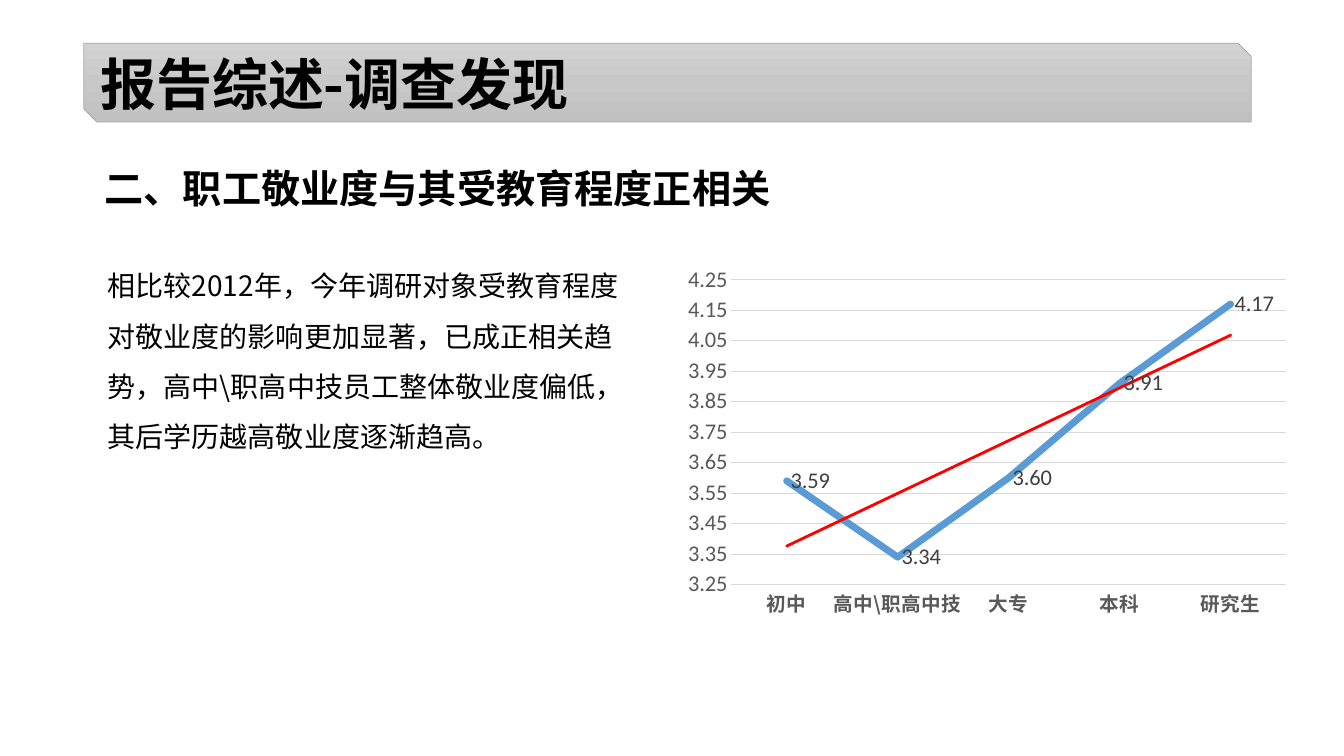
from copy import deepcopy

from lxml.etree import SubElement
from pptx import Presentation
from pptx.chart.data import CategoryChartData
from pptx.dml.color import RGBColor
from pptx.enum.chart import XL_CHART_TYPE as CHART, XL_LABEL_POSITION as LABEL, XL_TICK_MARK as TICK
from pptx.enum.shapes import MSO_SHAPE as SHAPE
from pptx.enum.text import MSO_ANCHOR as ANCHOR, MSO_AUTO_SIZE as AUTO, PP_ALIGN as ALIGN
from pptx.oxml import parse_xml
from pptx.oxml.ns import nsdecls, qn
from pptx.util import Inches, Pt

CJK, LATIN = "Noto Sans CJK SC", "Calibri"
EDUCATION = ["初中", "高中\\职高中技", "大专", "本科", "研究生"]
ENGAGEMENT = [3.59, 3.34, 3.6, 3.91, 4.17]
PLOT = dict(x=0.109, y=0.126, w=0.867, h=0.61)


def rgb(color):
    return RGBColor.from_string(color)


def style_font(font, size, color, name, bold=False):
    font.size, font.bold, font.name = Pt(size), bold, name
    font.color.rgb = rgb(color)


def style_line(line, color, width):
    line.color.rgb = rgb(color)
    line.width = Pt(width)


def add_ea(r_pr):
    ea = SubElement(r_pr, qn("a:ea"))
    ea.set("typeface", CJK)
    r_pr.find(qn("a:latin")).addnext(ea)


def write_text(tf, text, size, bold=False, before=0, spacing=1.0,
               anchor=ANCHOR.TOP, wrap=True, grow=False):
    tf.word_wrap, tf.vertical_anchor = wrap, anchor
    if grow:
        tf.auto_size = AUTO.SHAPE_TO_FIT_TEXT
    p = tf.paragraphs[0]
    p.alignment, p.space_before, p.line_spacing = ALIGN.LEFT, Pt(before), spacing
    r = p.add_run()
    r.text = text
    style_font(r.font, size, "000000", CJK, bold)
    add_ea(r.font._element)


def add_banner(s, box, text):
    sp = s.shapes.add_shape(SHAPE.SNIP_2_DIAG_RECTANGLE, *box)
    sp.shadow.inherit = False
    sp.fill.gradient()
    sp.fill.gradient_angle = 270
    first = sp.fill.gradient_stops[0]._gs
    first.addnext(deepcopy(first))
    for stop, color, position in zip(sp.fill.gradient_stops,
                                     ("D2D2D2", "C8C8C8", "C0C0C0"), (0, 0.5, 1)):
        stop.color.rgb = rgb(color)
        stop.position = position
    style_line(sp.line, "A5A5A5", 0.5)
    write_text(sp.text_frame, text, 40, bold=True, anchor=ANCHOR.MIDDLE)


def add_text(s, box, text, size, **fmt):
    write_text(s.shapes.add_textbox(*box).text_frame, text, size, before=10, grow=True, **fmt)


def place_plot(chart):
    area = chart._chartSpace.chart.plotArea
    for layout in area.findall(qn("c:layout")):
        area.remove(layout)
    sizes = "".join(f'<c:{key} val="{share}"/>' for key, share in PLOT.items())
    area.insert(0, parse_xml(
        f'<c:layout {nsdecls("c")}><c:manualLayout><c:layoutTarget val="inner"/>'
        f'<c:xMode val="edge"/><c:yMode val="edge"/>{sizes}</c:manualLayout></c:layout>'))


def add_trend(series, color, width):
    series._element.find(qn("c:cat")).addprevious(parse_xml(
        f'<c:trendline {nsdecls("c", "a")}><c:spPr><a:ln w="{Pt(width)}" cap="rnd"><a:solidFill>'
        f'<a:srgbClr val="{color}"/></a:solidFill></a:ln></c:spPr>'
        '<c:trendlineType val="linear"/><c:dispRSqr val="0"/><c:dispEq val="0"/></c:trendline>'))


def add_engagement_chart(s, box):
    data = CategoryChartData()
    data.categories = EDUCATION
    data.add_series("Series 1", ENGAGEMENT)
    chart = s.shapes.add_chart(CHART.LINE, *box, data).chart
    chart.has_title = chart.has_legend = False
    style_font(chart.font, 10, "000000", LATIN)
    place_plot(chart)

    cat, val = chart.category_axis, chart.value_axis
    for axis in (cat, val):
        axis.major_tick_mark = axis.minor_tick_mark = TICK.NONE
    style_font(cat.tick_labels.font, 14, "595959", CJK, bold=True)
    add_ea(cat.tick_labels.font._element)
    style_font(val.tick_labels.font, 16, "595959", LATIN)
    style_line(cat.format.line, "D9D9D9", 0.75)
    style_line(val.major_gridlines.format.line, "D9D9D9", 0.75)
    val.format.line.fill.background()
    val.minimum_scale, val.maximum_scale, val.major_unit = 3.25, 4.25, 0.1
    val.tick_labels.number_format = "####.00"
    val.tick_labels.number_format_is_linked = False

    plot = chart.plots[0]
    plot.vary_by_categories = False
    series = plot.series[0]
    series.smooth = False
    style_line(series.format.line, "5B9BD5", 5)
    series.format.line._get_or_add_ln().set("cap", "rnd")
    labels = series.data_labels
    labels.show_value, labels.position = True, LABEL.RIGHT
    labels.number_format = "#,##0.00_);[Red]\\(#,##0.00\\)"
    labels.number_format_is_linked = False
    style_font(labels.font, 16, "404040", LATIN)
    add_trend(series, "FF0000", 2)


def main():
    prs = Presentation()
    prs.slide_width, prs.slide_height = Inches(13.33), Inches(7.5)
    s = prs.slides.add_slide(prs.slide_layouts[6])

    def box(*lengths):
        return [Inches(length) for length in lengths]

    add_engagement_chart(s, box(6.56, 2.15, 6.35, 4.96))
    add_text(s, box(0.97, 2.45, 5.4, 2.12),
             "相比较2012年，今年调研对象受教育程度对敬业度的影响更加显著，已成正相关趋势，"
             "高中\\职高中技员工整体敬业度偏低，其后学历越高敬业度逐渐趋高。", 20, spacing=1.5)
    add_banner(s, box(0.83, 0.43, 11.58, 0.78), "报告综述-调查发现")
    add_text(s, box(0.94, 1.58, 6.88, 0.57), "二、职工敬业度与其受教育程度正相关", 28,
             bold=True, wrap=False)
    prs.save("out.pptx")


if __name__ == "__main__":
    main()
